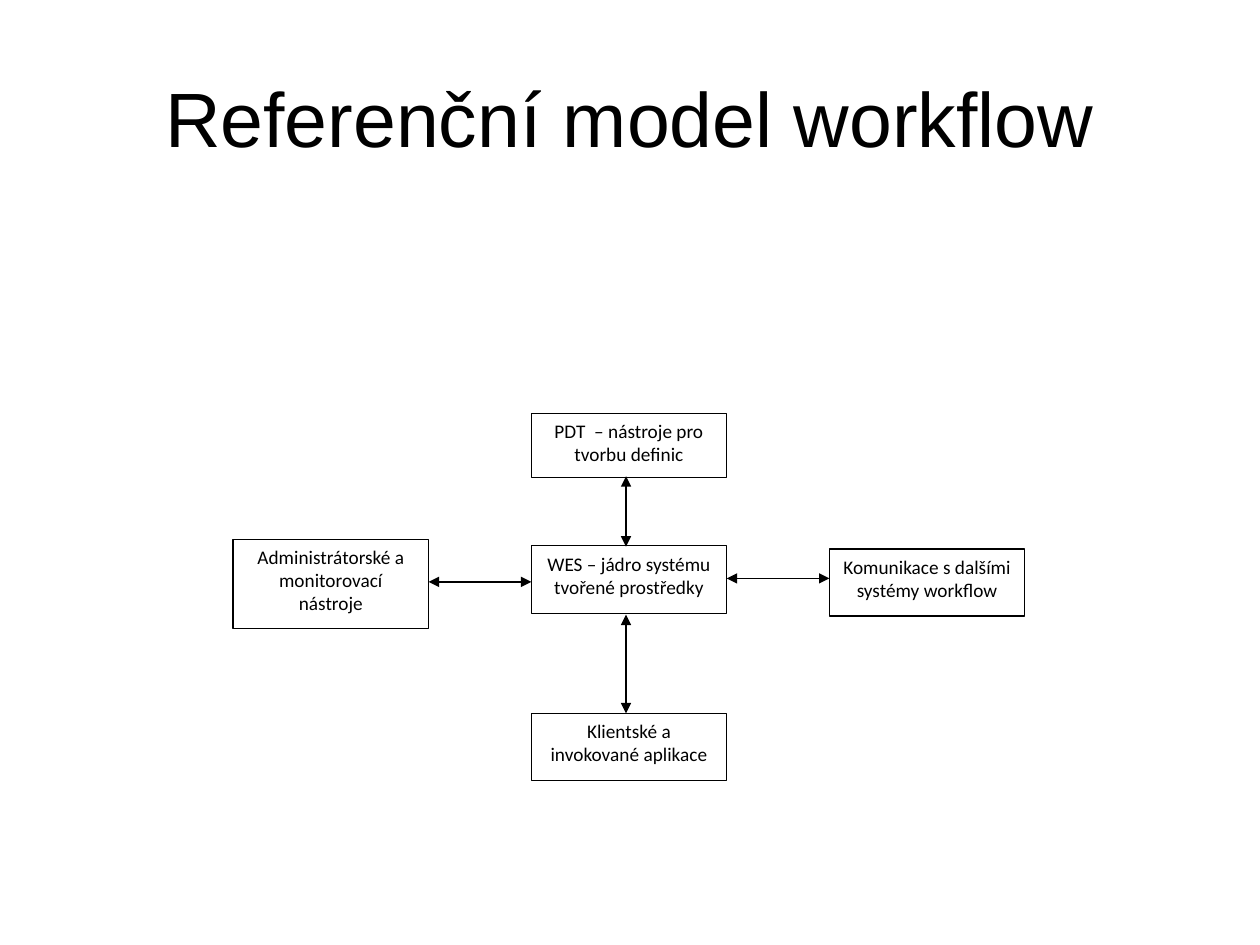
from lxml.etree import SubElement
from pptx import Presentation
from pptx.dml.color import RGBColor
from pptx.enum.shapes import MSO_CONNECTOR, MSO_SHAPE
from pptx.enum.text import MSO_ANCHOR, PP_ALIGN
from pptx.oxml.ns import qn
from pptx.util import Cm, Pt

COLORS = {"ink": "000000", "paper": "FFFFFF"}
BOX_WIDTH = 3.94
COLUMN_STEP = 6.01
COMPONENTS = [
    ("WES – jádro systému tvořené prostředky", 1, 2.67, 1.37),
    ("PDT  – nástroje pro tvorbu definic", 1, 0, 1.3),
    ("Klientské a invokované aplikace", 1, 6.05, 1.35),
    ("Komunikace s dalšími systémy workflow", 2, 2.74, 1.35),
    ("Administrátorské a monitorovací nástroje", 0, 2.54, 1.8),
]
AXIS = 7.92
ARROWS = [
    (AXIS, 1.27, AXIS, 2.69),
    (AXIS, 4.06, AXIS, 6.05),
    (COLUMN_STEP, 3.4, BOX_WIDTH, 3.4),
    (COLUMN_STEP + BOX_WIDTH, 3.33, 2 * COLUMN_STEP, 3.33),
]


def color(name):
    return RGBColor.from_string(COLORS[name])


def write(shape, text, font, size):
    frame = shape.text_frame
    frame.word_wrap = True
    frame.text = text
    para = frame.paragraphs[0]
    para.alignment = PP_ALIGN.CENTER
    span = para.runs[0]
    span.font.name = font
    span.font.size = Pt(size)
    span.font.color.rgb = color("ink")
    return frame


def outline(shape):
    shape.line.color.rgb = color("ink")
    shape.line.width = Pt(0.75)


def add_title(page, left, top, width, height):
    box = page.shapes.add_textbox(Cm(left), Cm(top), Cm(width), Cm(height))
    frame = write(box, "Referenční model workflow", "Arial", 44)
    frame.vertical_anchor = MSO_ANCHOR.MIDDLE


def add_component(page, text, left, top, height):
    box = page.shapes.add_shape(
        MSO_SHAPE.RECTANGLE, Cm(left), Cm(top), Cm(BOX_WIDTH), Cm(height)
    )
    box.shadow.inherit = False
    box.fill.solid()
    box.fill.fore_color.rgb = color("paper")
    outline(box)
    frame = write(box, text, "Calibri", 11)
    frame.vertical_anchor = MSO_ANCHOR.TOP
    frame.paragraphs[0].space_after = Pt(10)


def add_arrow(page, start_x, start_y, end_x, end_y):
    arrow = page.shapes.add_connector(
        MSO_CONNECTOR.STRAIGHT, Cm(start_x), Cm(start_y), Cm(end_x), Cm(end_y)
    )
    outline(arrow)
    line = arrow.line._get_or_add_ln()
    for end in ("a:headEnd", "a:tailEnd"):
        SubElement(line, qn(end), type="triangle")
    SubElement(arrow._element.spPr, qn("a:effectLst"))


def add_workflow_model(page, left, top):
    for text, column, offset, height in COMPONENTS:
        add_component(page, text, left + column * COLUMN_STEP, top + offset, height)
    for start_x, start_y, end_x, end_y in ARROWS:
        add_arrow(page, left + start_x, top + start_y, left + end_x, top + end_y)


def main():
    deck = Presentation()
    deck.slide_width = Cm(25.4)
    deck.slide_height = Cm(19.05)
    page = deck.slides.add_slide(deck.slide_layouts[6])
    add_title(page, 1.27, 0.76, 22.86, 3.18)
    add_workflow_model(page, 4.7, 8.33)
    deck.save("out.pptx")


if __name__ == "__main__":
    main()
